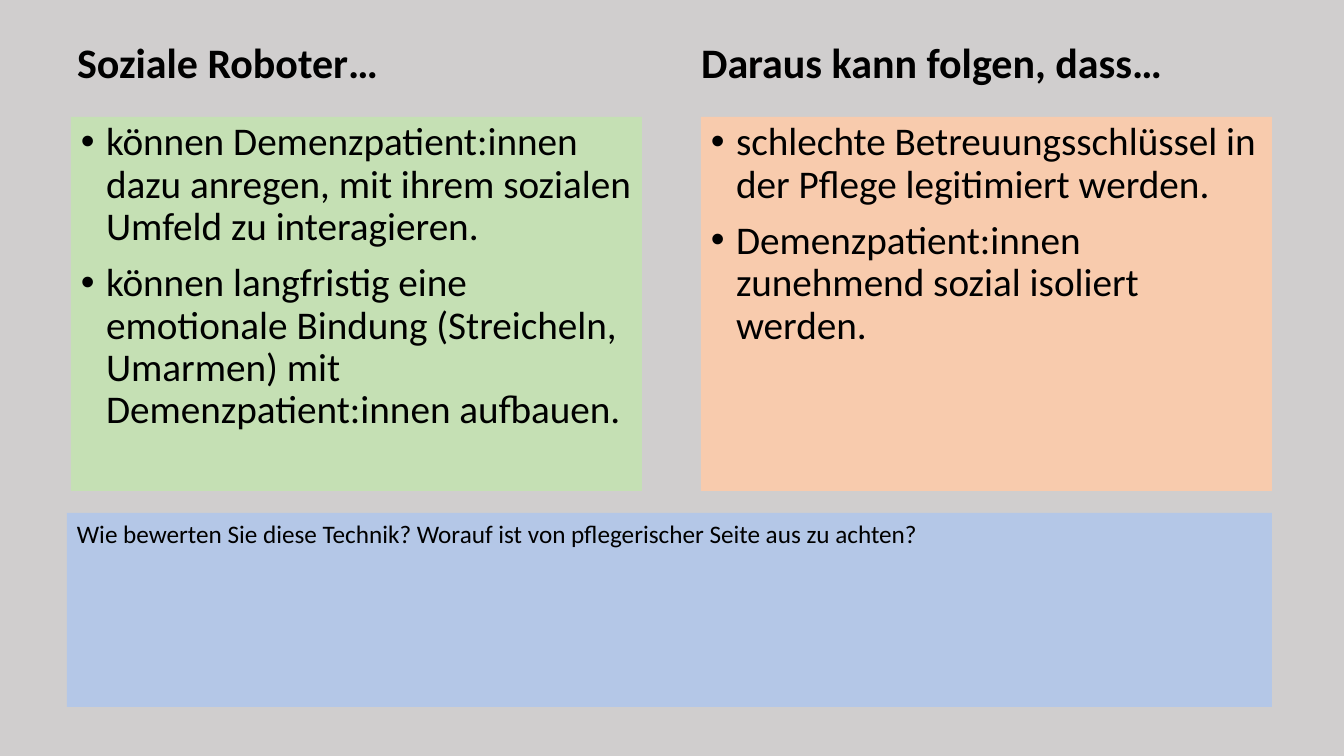
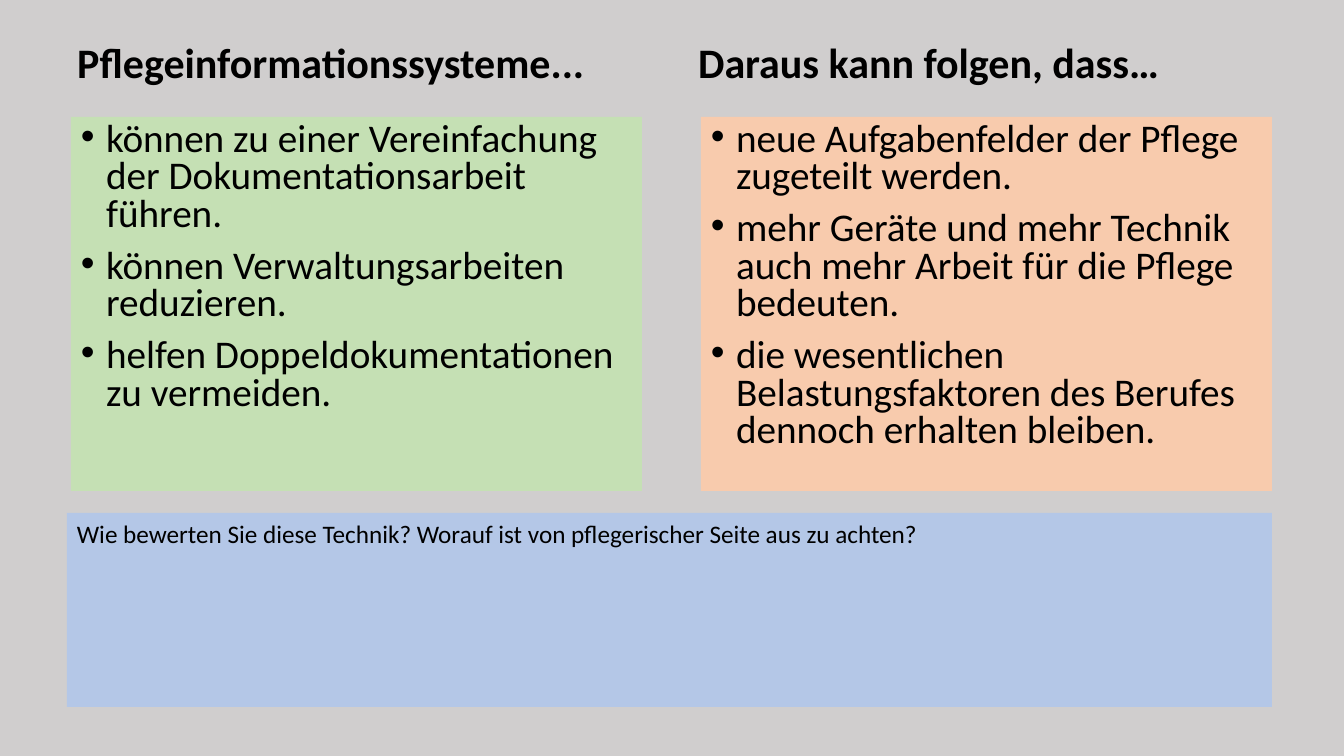
from pptx import Presentation
from pptx.dml.color import RGBColor
from pptx.enum.shapes import MSO_SHAPE
from pptx.enum.text import MSO_ANCHOR, MSO_AUTO_SIZE, PP_ALIGN
from pptx.oxml.ns import qn
from pptx.util import Pt
from lxml.etree import SubElement

WIDE, HIGH = 1344, 756
SCALE = 12192000 / WIDE
HUES = {"back": "D0CECE", "text": "000000", "pro": "C5E0B4",
        "con": "F8CBAD", "note": "B4C7E7"}
FONT = "Calibri"
HEAD = {"size": Pt(30), "bold": True}
BODY = {"size": Pt(28), "bold": False}
NOTE = {"size": Pt(18), "bold": False}
FRAME = {"word_wrap": True, "auto_size": MSO_AUTO_SIZE.NONE,
         "vertical_anchor": MSO_ANCHOR.TOP}
TOP, TALL, SPAN = 117, 374, 571
LEFT, RIGHT = 71, 701
EDGE = 67
ASK = "Wie bewerten Sie diese Technik? Worauf ist von pflegerischer Seite aus zu achten?"
NEXT = "Daraus kann folgen, dass…"

PAGES = [
    {"head": "Soziale Roboter…", "stop": 624, "lead": 0.9,
     "pro": ["können Demenzpatient:innen dazu anregen, mit ihrem sozialen Umfeld zu interagieren.",
             "können langfristig eine emotionale Bindung (Streicheln, Umarmen) mit "
             "Demenzpatient:innen aufbauen."],
     "con": ["schlechte Betreuungsschlüssel in der Pflege legitimiert werden.",
             "Demenzpatient:innen zunehmend sozial isoliert werden."]},
    {"head": "Pflegeinformationssysteme...", "stop": 621, "lead": 0.8,
     "pro": ["können zu einer Vereinfachung der Dokumentationsarbeit führen.",
             "können Verwaltungsarbeiten reduzieren.",
             "helfen Doppeldokumentationen zu vermeiden."],
     "con": ["neue Aufgabenfelder der Pflege zugeteilt werden.",
             "mehr Geräte und mehr Technik auch mehr Arbeit für die Pflege bedeuten.",
             "die wesentlichen Belastungsfaktoren des Berufes dennoch erhalten bleiben."]},
]


def px(num):
    return round(num * SCALE)


def tint(name):
    return RGBColor.from_string(HUES[name])


def apply(item, vals):
    for key, val in vals.items():
        setattr(item, key, val)


class Deck:
    def __init__(self):
        self.file = Presentation()
        apply(self.file, {"slide_width": px(WIDE), "slide_height": px(HIGH)})

    def page(self):
        self.slide = self.file.slides.add_slide(self.file.slide_layouts[5])
        fill = self.slide.background.fill
        fill.solid()
        fill.fore_color.rgb = tint("back")

    def label(self, shape, lines, style):
        frame = shape.text_frame
        apply(frame, FRAME)
        frame.text = "\n".join(lines)
        for para in frame.paragraphs:
            para.alignment = PP_ALIGN.LEFT
            for run in para.runs:
                apply(run.font, {"name": FONT, **style})
                run.font.color.rgb = tint("text")
        return frame.paragraphs

    def title(self, left, right, stop):
        shape = self.slide.shapes.title
        apply(shape, {"left": px(EDGE), "top": px(31),
                      "width": px(1180), "height": px(61)})
        para = self.label(shape, [f"{left}\t{right}"], HEAD)[0]
        tabs = SubElement(para._p.get_or_add_pPr(), qn("a:tabLst"))
        SubElement(tabs, qn("a:tab"), pos=str(px(stop)), algn="l")

    def box(self, x, y, w, h, hue, lines, style):
        shape = self.slide.shapes.add_shape(
            MSO_SHAPE.RECTANGLE, px(x), px(y), px(w), px(h))
        shape.shadow.inherit = False
        shape.fill.solid()
        shape.fill.fore_color.rgb = tint(hue)
        shape.line.fill.background()
        return self.label(shape, lines, style)

    def bullets(self, x, hue, lines, lead):
        for para in self.box(x, TOP, SPAN, TALL, hue, lines, BODY):
            apply(para, {"line_spacing": lead, "space_before": Pt(10)})
            props = para._p.get_or_add_pPr()
            props.set("marL", "228600")
            props.set("indent", "-228600")
            SubElement(props, qn("a:buFont"), typeface="Arial")
            SubElement(props, qn("a:buChar"), char="•")

    def note(self, text):
        self.box(EDGE, 513, RIGHT + SPAN - EDGE, 194, "note", [text], NOTE)


def main():
    deck = Deck()
    for page in PAGES:
        deck.page()
        deck.title(page["head"], NEXT, page["stop"])
        for x, side in ((LEFT, "pro"), (RIGHT, "con")):
            deck.bullets(x, side, page[side], page["lead"])
        deck.note(ASK)
    deck.file.save("out.pptx")


if __name__ == "__main__":
    main()
